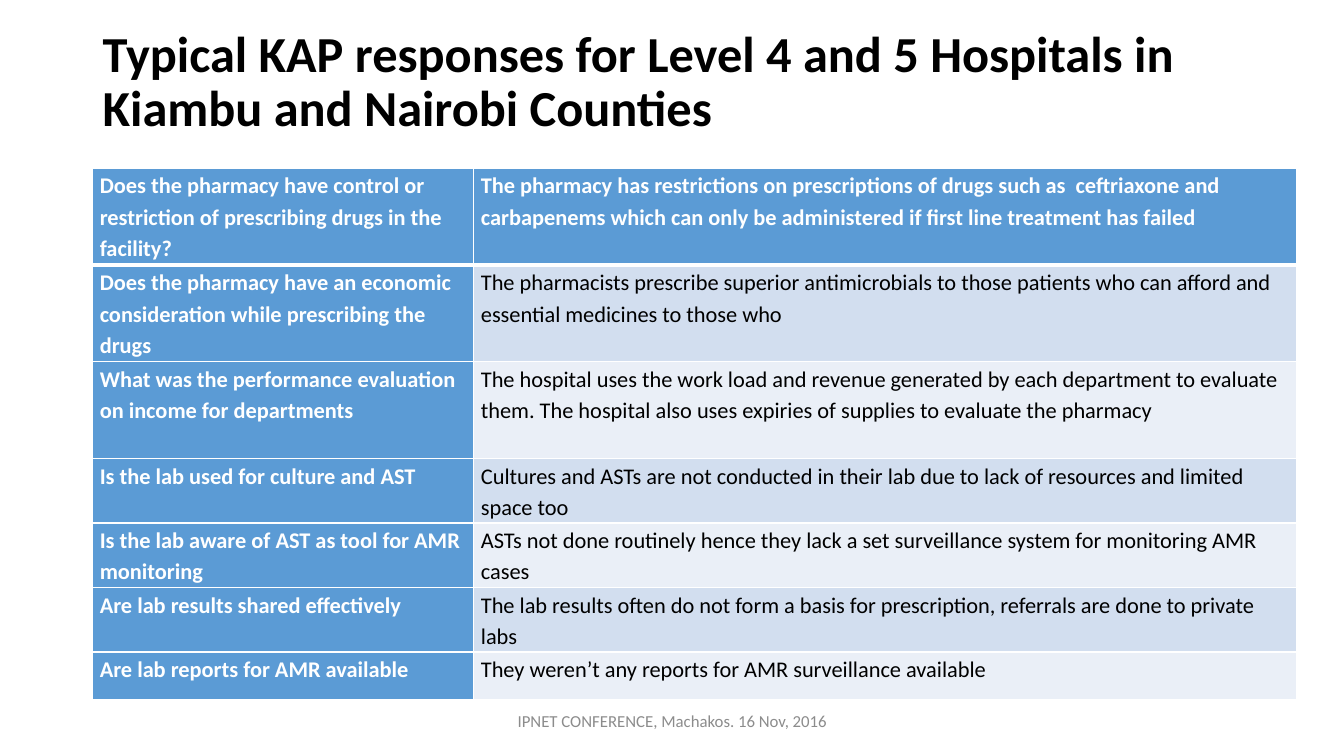
import pptx
import pptx.util
import pptx.dml.color
import pptx.enum.text
import pptx.oxml.ns
from lxml import etree

Inches = pptx.util.Inches
Pt = pptx.util.Pt
RGBColor = pptx.dml.color.RGBColor
ANCHOR = pptx.enum.text.MSO_ANCHOR
ALIGN = pptx.enum.text.PP_ALIGN

FONT = "Calibri"
BLACK = RGBColor(0x00, 0x00, 0x00)
WHITE = RGBColor(0xFF, 0xFF, 0xFF)
GREY = RGBColor(0x8C, 0x8C, 0x8C)
BLUE = RGBColor(0x5B, 0x9B, 0xD5)
BANDS = [RGBColor(0xEA, 0xEF, 0xF7), RGBColor(0xD2, 0xDE, 0xEF)]

TITLE = "Typical KAP responses for Level 4 and 5 Hospitals in Kiambu and Nairobi Counties"
FOOTER = "IPNET CONFERENCE, Machakos. 16 Nov, 2016"
WIDTHS = [3.78, 8.16]
# Row height, question, response
ROWS = [
    (0.96, "Does the pharmacy have control or restriction of prescribing drugs in the facility?",
     "The pharmacy has restrictions on prescriptions of drugs such as  ceftriaxone and "
     "carbapenems which can only be administered if first line treatment has failed"),
    (0.96, "Does the pharmacy have an economic consideration while prescribing the drugs",
     "The pharmacists prescribe superior antimicrobials to those patients who can afford "
     "and essential medicines to those who"),
    (0.96, "What was the performance evaluation on income for departments",
     "The hospital uses the work load and revenue generated by each department to evaluate "
     "them. The hospital also uses expiries of supplies to evaluate the pharmacy"),
    (0.64, "Is the lab used for culture and AST",
     "Cultures and ASTs are not conducted in their lab due to lack of resources and "
     "limited space too"),
    (0.64, "Is the lab aware of AST as tool for AMR monitoring",
     "ASTs not done routinely hence they lack a set surveillance system for monitoring "
     "AMR cases"),
    (0.64, "Are lab results shared effectively",
     "The lab results often do not form a basis for prescription, referrals are done to "
     "private labs"),
    (0.47, "Are lab reports for AMR available",
     "They weren’t any reports for AMR surveillance available"),
]


def set_text(frame, text, size, color, bold=False, spacing=1.0, align=ALIGN.LEFT):
    frame.text = text
    frame.word_wrap = True
    para = frame.paragraphs[0]
    para.line_spacing = spacing
    para.alignment = align
    font = para.runs[0].font
    font.name = FONT
    font.size = Pt(size)
    font.bold = bold
    font.color.rgb = color


def add_label(slide, left, top, width, height, text, **style):
    box = slide.shapes.add_textbox(Inches(left), Inches(top), Inches(width), Inches(height))
    box.text_frame.vertical_anchor = ANCHOR.MIDDLE
    set_text(box.text_frame, text, **style)


def add_edge(cell, side, width):
    """Draw one white border of a cell."""
    props = cell._tc.get_or_add_tcPr()
    qn = pptx.oxml.ns.qn
    line = etree.SubElement(props, qn("a:ln" + side), w=str(Pt(width)))
    fill = etree.SubElement(line, qn("a:solidFill"))
    etree.SubElement(fill, qn("a:srgbClr"), val=str(WHITE))


def fill_cell(cell, text, row, col):
    head = row == 0 or col == 0
    cell.margin_left = cell.margin_right = Inches(0.07)
    cell.margin_top = cell.margin_bottom = 0
    set_text(cell.text_frame, text, 16, WHITE if head else BLACK, head, 1.15)
    # A thick rule parts the first row from the rest
    edges = {"L": 1, "R": 1, "T": 3 if row == 1 else 1, "B": 3 if row == 0 else 1}
    for side, width in edges.items():
        add_edge(cell, side, width)
    cell.fill.solid()
    cell.fill.fore_color.rgb = BLUE if head else BANDS[row % 2]


def add_grid(slide, left, top):
    height = sum(row[0] for row in ROWS)
    frame = slide.shapes.add_table(len(ROWS), len(WIDTHS), Inches(left), Inches(top),
                                   Inches(sum(WIDTHS)), Inches(height))
    table = frame.table
    for col, width in enumerate(WIDTHS):
        table.columns[col].width = Inches(width)
    for row, (height, *texts) in enumerate(ROWS):
        table.rows[row].height = Inches(height)
        for col, text in enumerate(texts):
            fill_cell(table.cell(row, col), text, row, col)


def main():
    deck = pptx.Presentation()
    deck.slide_width = Inches(13.33)
    deck.slide_height = Inches(7.5)
    slide = deck.slides.add_slide(deck.slide_layouts[6])
    # Responses
    add_grid(slide, 0.92, 1.67)
    # Title and footer
    add_label(slide, 0.92, 0.2, 11.5, 1.25, TITLE, size=36, color=BLACK, bold=True, spacing=0.9)
    add_label(slide, 4.42, 6.95, 4.5, 0.4, FOOTER, size=12, color=GREY, align=ALIGN.CENTER)
    deck.save("out.pptx")


if __name__ == "__main__":
    main()
